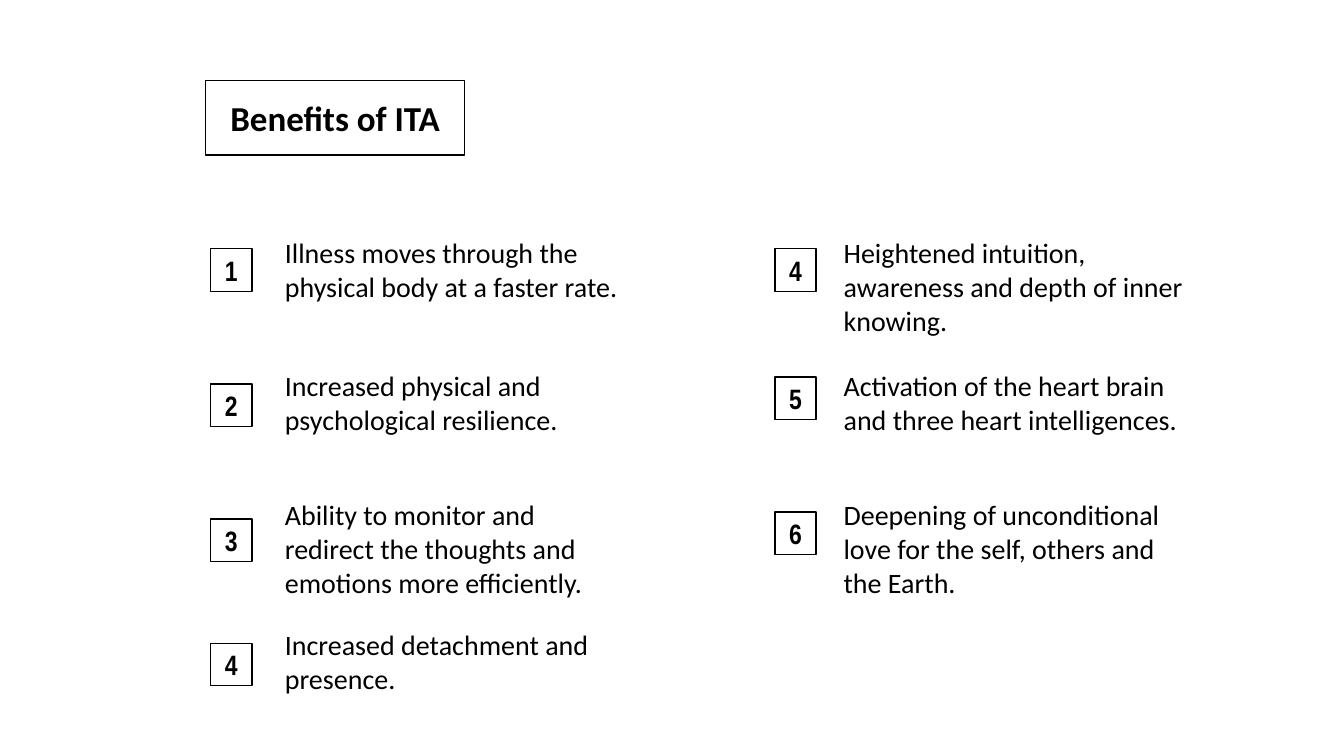
from dataclasses import dataclass

from pptx import Presentation
from pptx.dml.color import RGBColor
from pptx.enum.shapes import MSO_SHAPE
from pptx.enum.text import MSO_ANCHOR, MSO_AUTO_SIZE, PP_ALIGN
from pptx.util import Cm, Pt


@dataclass(frozen=True)
class Theme:
    ink: RGBColor = RGBColor(0, 0, 0)
    paper: RGBColor = RGBColor(255, 255, 255)
    body: str = "Calibri"
    digit: str = "Arial Narrow"
    head: int = 25
    text: int = 20
    rule: int = 1


THEME = Theme()

# Row tops, shared by both columns
ROWS = (5.82, 9.17, 12.42, 15.7)

# Each item: number, drop of its badge below the row top, lines, wording
LEFT = (
    ("1", 0.45, 2, "Illness moves through the physical body at a faster rate."),
    ("2", 0.51, 2, "Increased physical and psychological resilience."),
    ("3", 0.66, 3, "Ability to monitor and redirect the thoughts and emotions more efficiently."),
    ("4", 0.51, 2, "Increased detachment and presence."),
)
RIGHT = (
    ("4", 0.45, 3, "Heightened intuition, awareness and depth of inner knowing."),
    ("5", 0.33, 2, "Activation of the heart brain and three heart intelligences."),
    ("6", 0.48, 3, "Deepening of unconditional love for the self, others and the Earth."),
)


def add_run(frame, text, font, size, bold=False):
    run = frame.paragraphs[0].add_run()
    run.text = text
    run.font.name = font
    run.font.size = Pt(size)
    run.font.bold = bold
    run.font.color.rgb = THEME.ink


def add_box(slide, x, y, w, h, text, font, size):
    """Outlined box with a centred bold label."""
    box = slide.shapes.add_shape(MSO_SHAPE.RECTANGLE, Cm(x), Cm(y), Cm(w), Cm(h))
    box.shadow.inherit = False
    box.fill.solid()
    box.fill.fore_color.rgb = THEME.paper
    box.line.color.rgb = THEME.ink
    box.line.width = Pt(THEME.rule)
    frame = box.text_frame
    frame.margin_left = frame.margin_right = 0
    frame.margin_top = frame.margin_bottom = 0
    frame.word_wrap = False
    frame.vertical_anchor = MSO_ANCHOR.MIDDLE
    frame.paragraphs[0].alignment = PP_ALIGN.CENTER
    add_run(frame, text, font, size, True)


def add_note(slide, x, y, w, lines, text):
    """Wrapped text, as tall as its lines plus the insets."""
    box = slide.shapes.add_textbox(Cm(x), Cm(y), Cm(w), Cm(0.26 + 0.85 * lines))
    frame = box.text_frame
    frame.word_wrap = True
    frame.auto_size = MSO_AUTO_SIZE.SHAPE_TO_FIT_TEXT
    add_run(frame, text, THEME.body, THEME.text)


def add_column(slide, x, w, gap, items):
    """Numbered items in a column w wide, text starting gap from its edge."""
    for top, (number, drop, lines, text) in zip(ROWS, items):
        add_box(slide, x, top + drop, 1.04, 1.07, number, THEME.digit, THEME.text)
        add_note(slide, x + gap, top, w - gap, lines, text)


def main():
    deck = Presentation()
    deck.slide_width, deck.slide_height = Cm(33.87), Cm(19.05)
    slide = deck.slides.add_slide(deck.slide_layouts[6])

    # Title
    add_box(slide, 5.18, 2.03, 6.53, 1.88, "Benefits of ITA", THEME.body, THEME.head)

    # Benefits
    add_column(slide, 5.31, 10.69, 1.62, LEFT)
    add_column(slide, 19.53, 10.55, 1.48, RIGHT)

    deck.save("out.pptx")


if __name__ == "__main__":
    main()
